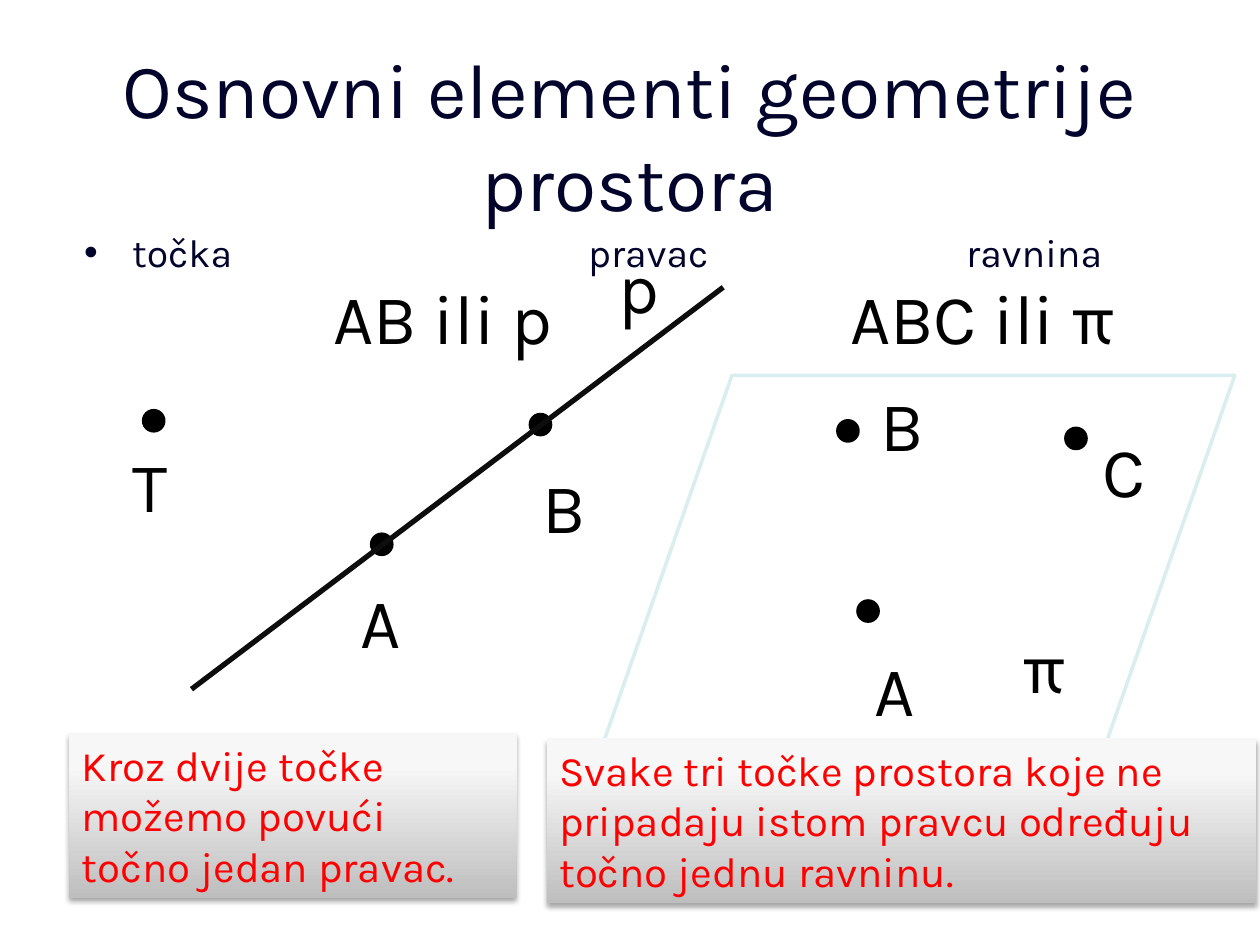
from lxml import etree
from pptx import Presentation
from pptx import util as u
from pptx.dml.color import RGBColor
from pptx.enum import shapes, text
from pptx.oxml import parse_xml
from pptx.oxml.ns import nsdecls, qn

FONT = "Karla"
NAVY = RGBColor(0x03, 0x04, 0x2B)
BLACK = RGBColor(0, 0, 0)
NEAR_BLACK = RGBColor(0x0D, 0x0D, 0x0D)
WHITE = RGBColor(0xFF, 0xFF, 0xFF)
PALE_TEAL = RGBColor(0xDA, 0xED, 0xEF)
RED = RGBColor(0xFF, 0, 0)
GREY = RGBColor(0xBE, 0xBE, 0xBE)
LIGHT_GREY = RGBColor(0xF7, 0xF7, 0xF7)

SHADOW = f"""<a:effectLst {nsdecls('a')}>
  <a:outerShdw blurRad="{u.Pt(3.1)}" dist="{u.Pt(1.8)}" dir="5400000" rotWithShape="0">
    <a:srgbClr val="000000"><a:alpha val="35000"/></a:srgbClr>
  </a:outerShdw>
</a:effectLst>"""


def write(box, words, size=40, color=BLACK, align=text.PP_ALIGN.LEFT,
          anchor=text.MSO_ANCHOR.TOP, wrap=True, fit=text.MSO_AUTO_SIZE.NONE):
    frame = box.text_frame
    frame.word_wrap = wrap
    frame.auto_size = fit
    frame.vertical_anchor = anchor
    para = frame.paragraphs[0]
    para.alignment = align
    span = para.add_run()
    span.text = words
    span.font.name = FONT
    span.font.size = u.Pt(size)
    span.font.color.rgb = color
    return para


deck = Presentation()
deck.slide_width, deck.slide_height = u.Inches(10), u.Inches(7.5)
page = deck.slides.add_slide(deck.slide_layouts[5])

# Plane
plane = page.shapes.add_shape(shapes.MSO_SHAPE.PARALLELOGRAM, u.Inches(4.78),
                              u.Inches(2.98), u.Inches(5.02), u.Inches(2.94))
plane.adjustments[0] = 0.35
plane.shadow.inherit = False
plane.fill.solid()
plane.fill.fore_color.rgb = WHITE
plane.line.color.rgb = PALE_TEAL
plane.line.width = u.Pt(2)

# Title
title = page.shapes.title
title.left, title.top = u.Inches(0.75), u.Inches(0.44)
title.width, title.height = u.Inches(8.5), u.Inches(1.25)
write(title, "Osnovni elementi geometrije prostora", size=44, color=NAVY,
      align=text.PP_ALIGN.CENTER, anchor=text.MSO_ANCHOR.MIDDLE)

# Bulleted row of the three elements, spaced by tab stops
row = page.shapes.add_textbox(u.Inches(0.57), u.Inches(1.76), u.Inches(9), u.Inches(0.5))
para = write(row, "točka\tpravac\travnina", size=22.4, color=NAVY)
props = para._p.get_or_add_pPr()
props.set("marL", str(u.Inches(0.38)))
props.set("indent", str(u.Inches(-0.38)))
etree.SubElement(props, qn("a:buFont"), typeface="Arial")
etree.SubElement(props, qn("a:buChar"), char="•")
stops = etree.SubElement(props, qn("a:tabLst"))
for stop in (4, 7):
    etree.SubElement(stops, qn("a:tab"), pos=str(u.Inches(stop)), algn="l")

# Points: T, then A and B on the line, then B, C and A in the plane
DOT = 0.16
for left, top in ((1.14, 3.26), (2.95, 4.24), (4.21, 3.29),
                  (6.65, 3.34), (8.46, 3.4), (6.81, 4.77)):
    dot = page.shapes.add_shape(shapes.MSO_SHAPE.OVAL, u.Inches(left), u.Inches(top),
                                u.Inches(DOT), u.Inches(DOT))
    dot.shadow.inherit = False
    dot.fill.solid()
    dot.fill.fore_color.rgb = BLACK
    dot.line.color.rgb = BLACK
    dot.line.width = u.Pt(2)

# Line p
line = page.shapes.add_connector(shapes.MSO_CONNECTOR.STRAIGHT, u.Inches(1.52),
                                 u.Inches(5.47), u.Inches(5.74), u.Inches(2.28))
line.line.color.rgb = NEAR_BLACK
line.line.width = u.Pt(3)
etree.SubElement(line._element.spPr, qn("a:effectLst"))

# Labels
for words, left, top, width in (
    ("T", 0.95, 3.46, 0.54),
    ("A", 2.76, 4.54, 0.58),
    ("B", 4.21, 3.63, 0.58),
    ("A", 6.84, 5.08, 0.58),
    ("B", 6.89, 2.98, 0.58),
    ("C", 8.65, 3.34, 0.61),
    ("p", 4.81, 1.88, 0.51),
    ("π", 8.02, 4.9, 0.59),
    ("ABC ili π", 6.65, 2.13, 2.43),
    ("AB ili p", 2.55, 2.13, 1.95),
):
    label = page.shapes.add_textbox(u.Inches(left), u.Inches(top),
                                    u.Inches(width), u.Inches(0.77))
    write(label, words, wrap=False, fit=text.MSO_AUTO_SIZE.SHAPE_TO_FIT_TEXT)

# Statements
for words, left, top, width in (
    ("Kroz dvije točke možemo povući točno jedan pravac.", 0.55, 5.82, 3.55),
    ("Svake tri točke prostora koje ne pripadaju istom pravcu određuju "
     "točno jednu ravninu.", 4.34, 5.86, 5.63),
):
    card = page.shapes.add_shape(shapes.MSO_SHAPE.RECTANGLE, u.Inches(left), u.Inches(top),
                                 u.Inches(width), u.Inches(1.31))
    card.fill.gradient()
    card.fill.gradient_angle = 90
    for stop, color, position in zip(card.fill.gradient_stops, (GREY, LIGHT_GREY), (0, 0.8)):
        stop.color.rgb = color
        stop.position = position
    card.line.fill.background()
    card._element.spPr.append(parse_xml(SHADOW))
    write(card, words, size=24, color=RED, fit=text.MSO_AUTO_SIZE.SHAPE_TO_FIT_TEXT)

deck.save("out.pptx")
